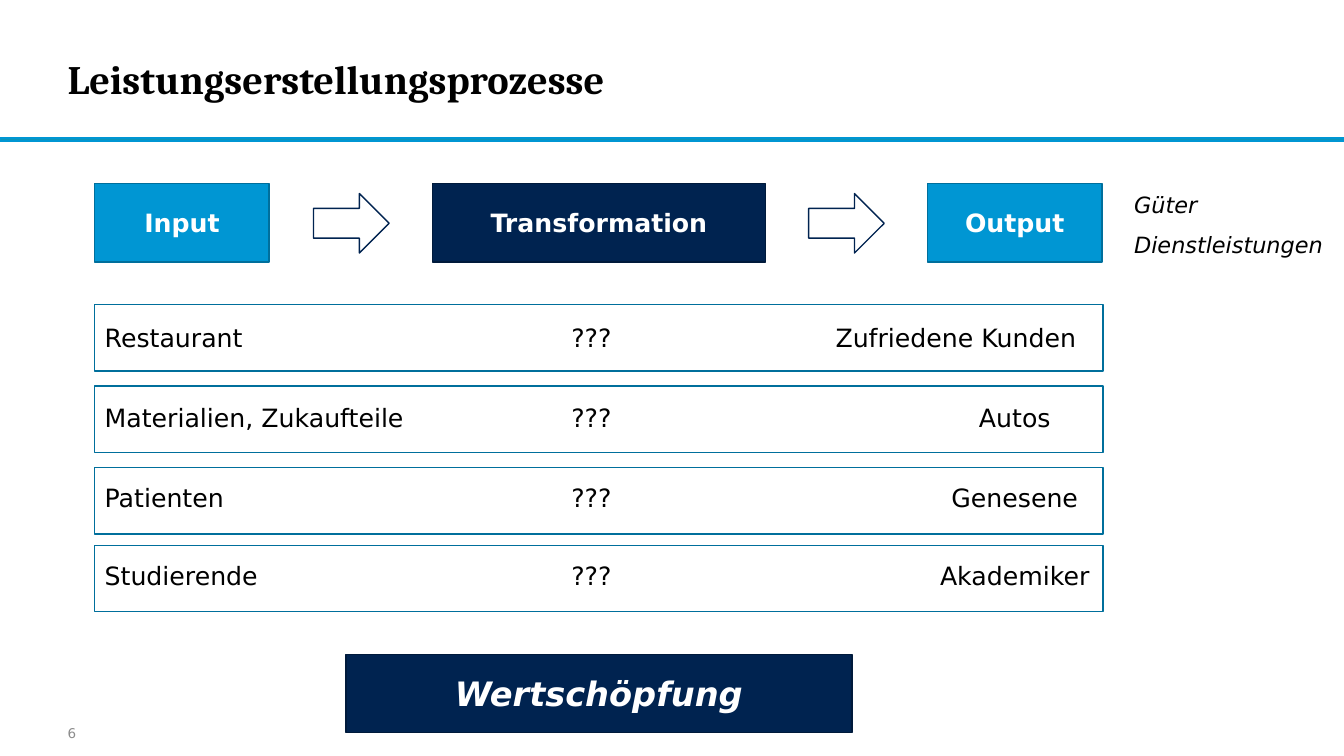
from dataclasses import dataclass

from pptx import Presentation
from pptx import util as u
from pptx.dml import color
from pptx.enum import shapes, text


@dataclass(frozen=True)
class Theme:
    """Colours, fonts and type sizes of the slide."""
    black: str = "000000"
    white: str = "FFFFFF"
    grey: str = "8C8C8C"
    rule: str = "0C94B7"
    blue: str = "0096D3"
    blue_edge: str = "006F9C"
    navy: str = "002350"
    navy_edge: str = "001A3B"
    heading_font: str = "Cambria"
    body_font: str = "DejaVu Sans"
    title: float = 28.8
    value: float = 24
    body: float = 18
    remark: float = 16
    number: float = 9.6


THEME = Theme()
RECT = shapes.MSO_SHAPE.RECTANGLE
ARROW = shapes.MSO_SHAPE.RIGHT_ARROW
LEFT = text.PP_ALIGN.LEFT
CENTER = text.PP_ALIGN.CENTER
TOP = text.MSO_ANCHOR.TOP
MIDDLE = text.MSO_ANCHOR.MIDDLE

ROW_LEFT, ROW_WIDTH, ROW_HEIGHT = 0.94, 10, 0.66
LABEL_HEIGHT = 0.4
EXAMPLES = [
    (3.02, 3.15, "Restaurant", "Zufriedene Kunden", 8.02, 2.92),
    (3.83, 3.94, "Materialien, Zukaufteile", "Autos", 9.2, 1.73),
    (4.64, 4.74, "Patienten", "Genesene", 9.2, 1.73),
    (5.41, 5.51, "Studierende", "Akademiker", 9.2, 1.73),
]


def rgb(value):
    """Turn a hex string into a colour."""
    return color.RGBColor.from_string(value)


def write(frame, words, size, ink, align=LEFT, bold=False, italic=False,
          font=THEME.body_font):
    """Write one run into a text frame."""
    paragraph = frame.paragraphs[0]
    paragraph.alignment = align
    run = paragraph.add_run()
    run.text = words
    run.font.size = u.Pt(size)
    run.font.name = font
    run.font.bold = bold
    run.font.italic = italic
    run.font.color.rgb = rgb(ink)


def add_outline(slide, kind, left, top, width, height, edge, fill=None):
    """Add a preset shape with a thin edge and an optional fill."""
    shape = slide.shapes.add_shape(kind, u.Inches(left), u.Inches(top),
                                   u.Inches(width), u.Inches(height))
    shape.shadow.inherit = False
    shape.line.color.rgb = rgb(edge)
    shape.line.width = u.Pt(1)
    if fill:
        shape.fill.solid()
        shape.fill.fore_color.rgb = rgb(fill)
    else:
        shape.fill.background()
    return shape


def add_block(slide, words, left, top, width, fill, edge, size=THEME.body,
              italic=False):
    """Add a filled block with a bold centred caption."""
    block = add_outline(slide, RECT, left, top, width, 0.78, edge, fill)
    block.text_frame.vertical_anchor = MIDDLE
    write(block.text_frame, words, size, THEME.white, CENTER, True, italic)


def add_label(slide, words, left, top, width, height, size=THEME.body,
              ink=THEME.black, anchor=TOP, wrap=True, insets=None, **style):
    """Add a text box holding one line."""
    label = slide.shapes.add_textbox(u.Inches(left), u.Inches(top),
                                     u.Inches(width), u.Inches(height))
    frame = label.text_frame
    frame.word_wrap = wrap
    frame.vertical_anchor = anchor
    if insets:
        side, edge = insets
        frame.margin_left = frame.margin_right = u.Inches(side)
        frame.margin_top = frame.margin_bottom = u.Inches(edge)
    write(frame, words, size, ink, **style)


def add_header(slide):
    """Add the title, its rule and the slide number."""
    add_outline(slide, RECT, 0, 1.37, 13.33, 0.03, THEME.blue, THEME.rule)
    add_label(slide, "Leistungserstellungsprozesse", 0.67, 0.18, 9.97, 1.19,
              THEME.title, anchor=MIDDLE, insets=(0, 0), bold=True,
              font=THEME.heading_font)
    add_label(slide, "6", 0.67, 7.1, 1.3, 0.34, THEME.number, THEME.grey,
              MIDDLE, insets=(0, 0.05))


def add_process(slide):
    """Add the chain from input to output with its remarks."""
    for words, left, width, fill, edge in (
            ("Input", 0.94, 1.73, THEME.blue, THEME.blue_edge),
            ("Transformation", 4.29, 3.3, THEME.navy, THEME.navy_edge),
            ("Output", 9.2, 1.73, THEME.blue, THEME.blue_edge)):
        add_block(slide, words, left, 1.82, width, fill, edge)
    for left in (3.11, 8.02):
        add_outline(slide, ARROW, left, 1.92, 0.75, 0.59, THEME.navy,
                    THEME.white)
    for words, top, width in (("Güter", 1.85, 0.83),
                              ("Dienstleistungen", 2.24, 2.08)):
        add_label(slide, words, 11.15, top, width, 0.37, THEME.remark,
                  wrap=False, italic=True)


def add_example(slide, row_top, label_top, source, result, result_left,
                result_width):
    """Add one framed example row."""
    add_outline(slide, RECT, ROW_LEFT, row_top, ROW_WIDTH, ROW_HEIGHT,
                THEME.blue_edge)
    add_label(slide, source, ROW_LEFT, label_top, 3.2, LABEL_HEIGHT)
    add_label(slide, "???", 4.94, label_top, 1.85, LABEL_HEIGHT, align=CENTER)
    add_label(slide, result, result_left, label_top, result_width,
              LABEL_HEIGHT, align=CENTER)


def main():
    """Build and save the slide."""
    deck = Presentation()
    deck.slide_width = u.Inches(13.33)
    deck.slide_height = u.Inches(7.5)
    slide = deck.slides.add_slide(deck.slide_layouts[6])
    add_header(slide)
    add_process(slide)
    for example in EXAMPLES:
        add_example(slide, *example)
    add_block(slide, "Wertschöpfung", 3.43, 6.49, 5.02, THEME.navy,
              THEME.navy_edge, THEME.value, italic=True)
    deck.save("out.pptx")


if __name__ == "__main__":
    main()
